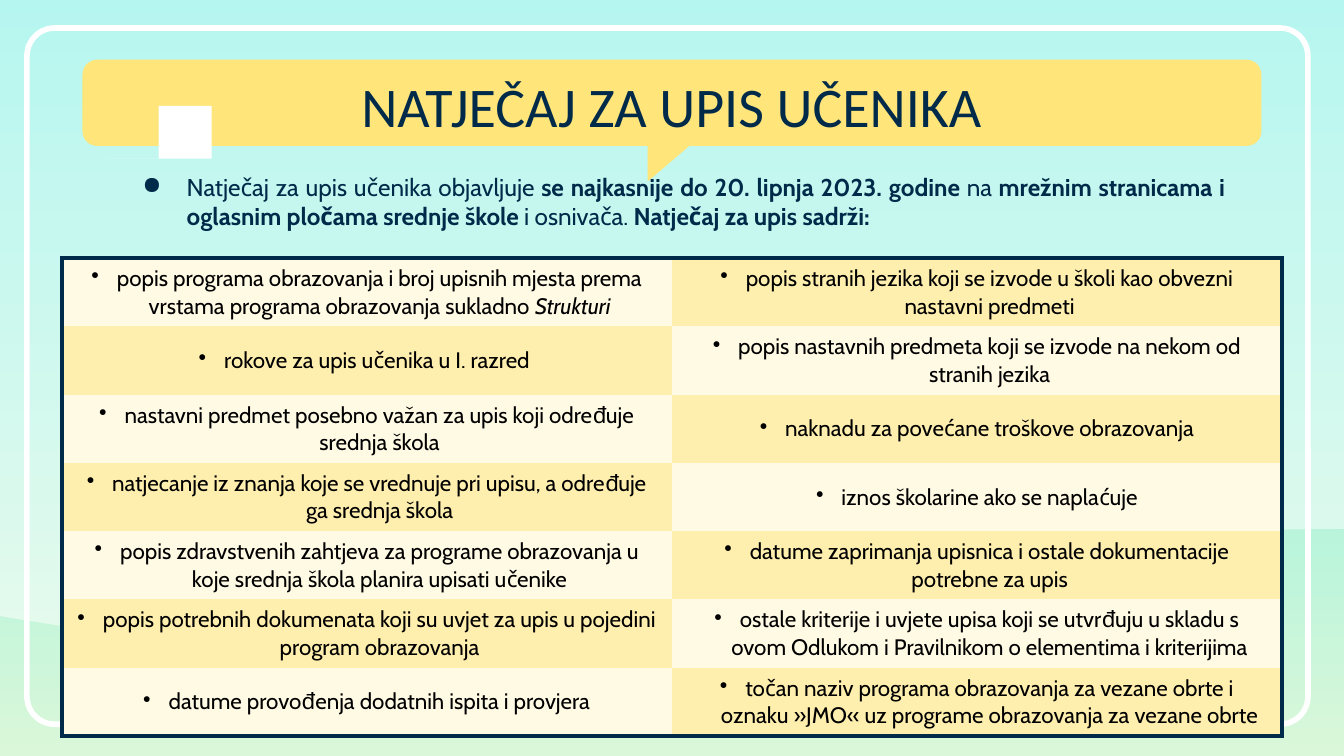
"""Build the slide about the call for pupil enrolment."""
from lxml import etree
from pptx import Presentation
from pptx.dml.color import RGBColor
from pptx.enum import shapes, text
from pptx.oxml import ns
from pptx.util import Cm, Pt

NAVY = RGBColor(0x00, 0x2A, 0x49)
BLACK = RGBColor(0x00, 0x00, 0x00)
WHITE = RGBColor(0xFF, 0xFF, 0xFF)
YELLOW = RGBColor(0xFF, 0xE5, 0x7A)
CREAM = RGBColor(0xFF, 0xFA, 0xE4)
BUTTER = RGBColor(0xFF, 0xEF, 0xAF)
AQUA = RGBColor(0x67, 0xEE, 0xE0)
MINT = RGBColor(0xDA, 0xF7, 0xD9)

TITLE = "NATJEČAJ ZA UPIS UČENIKA"
INTRO = [
    ("Natječaj za upis učenika objavljuje ", False),
    ("se najkasnije do 20. lipnja 2023. godine ", True),
    ("na ", False),
    ("mrežnim stranicama i oglasnim pločama srednje škole", True),
    (" i osnivača. ", False),
    ("Natječaj za upis sadrži:", True),
]
CONTENTS = [
    ("popis programa obrazovanja i broj upisnih mjesta prema vrstama programa obrazovanja sukladno ",
     "popis stranih jezika koji se izvode u školi kao obvezni nastavni predmeti"),
    ("rokove za upis učenika u I. razred ",
     "popis nastavnih predmeta koji se izvode na nekom od stranih jezika"),
    ("nastavni predmet posebno važan za upis koji određuje srednja škola",
     "naknadu za povećane troškove obrazovanja"),
    ("natjecanje iz znanja koje se vrednuje pri upisu, a određuje ga srednja škola",
     "iznos školarine ako se naplaćuje"),
    ("popis zdravstvenih zahtjeva za programe obrazovanja u koje srednja škola planira upisati učenike",
     "datume zaprimanja upisnica i ostale dokumentacije potrebne za upis"),
    ("popis potrebnih dokumenata koji su uvjet za upis u pojedini program obrazovanja",
     "ostale kriterije i uvjete upisa koji se utvrđuju u skladu s ovom Odlukom i Pravilnikom "
     "o elementima i kriterijima"),
    ("datume provođenja dodatnih ispita i provjera",
     "točan naziv programa obrazovanja za vezane obrte i oznaku »JMO« uz programe obrazovanja "
     "za vezane obrte"),
]
CLOUD_START = (3.23, 2.34)
CLOUD_CURVES = [
    ((3.18, 2.34), (3.15, 2.36), (3.12, 2.36)),
    ((2.69, 2.46), (2.62, 2.84), (2.62, 2.84)),
    ((2.54, 2.79), (2.46, 2.77), (2.39, 2.77)),
    ((2.13, 2.77), (2.01, 3.15), (2.01, 3.15)),
    ((2.01, 3.15), (4.19, 3.12), (4.19, 3.12)),
    ((4.04, 2.9), (3.86, 2.87), (3.78, 2.87)),
    ((3.73, 2.87), (3.73, 2.87), (3.73, 2.87)),
    ((3.73, 2.87), (3.56, 2.34), (3.23, 2.34)),
]


def add_child(parent, tag, **attributes):
    """Append a DrawingML element and return it."""
    return etree.SubElement(parent, ns.qn(f"a:{tag}"), attributes)


def paint_background(slide):
    """Fill the background with a gradient from top to bottom."""
    fill = slide.background.fill
    fill.gradient()
    fill.gradient_angle = 270
    for stop, color, position in zip(fill.gradient_stops, (AQUA, MINT), (0, 1)):
        stop.color.rgb = color
        stop.position = position


def add_panel(slide, kind, box, color=None, adjust=None):
    """Add a preset shape, filled only when a colour is given."""
    panel = slide.shapes.add_shape(kind, *map(Cm, box))
    panel.shadow.inherit = False
    panel.line.fill.background()
    if color is None:
        panel.fill.background()
    else:
        panel.fill.solid()
        panel.fill.fore_color.rgb = color
    if adjust is not None:
        panel.adjustments[0] = adjust
    return panel


def add_wave(slide):
    """Add the translucent white wave."""
    wave = add_panel(slide, shapes.MSO_SHAPE.FLOWCHART_DOCUMENT, (0, 0, 25.43, 12.47), WHITE)
    color = wave.fill._xPr.find(ns.qn("a:solidFill"))[0]
    add_child(color, "alpha", val="52000")


def add_cloud(slide):
    """Add the cloud outlined by cubic curves."""
    start, points = CLOUD_START, []
    for first, second, end in CLOUD_CURVES:
        for t in (step / 12 for step in range(1, 13)):
            points.append(tuple(
                (1 - t) ** 3 * a + 3 * (1 - t) ** 2 * t * b + 3 * (1 - t) * t ** 2 * c + t ** 3 * d
                for a, b, c, d in zip(start, first, second, end)))
        start = end
    builder = slide.shapes.build_freeform(*CLOUD_START, scale=Cm(1))
    builder.add_line_segments(points)
    cloud = builder.convert_to_shape()
    cloud.shadow.inherit = False
    cloud.fill.solid()
    cloud.fill.fore_color.rgb = WHITE
    cloud.line.fill.background()


def set_bullet(paragraph, mark, color, indent, hanging):
    """Give a paragraph a coloured bullet and a hanging indent."""
    properties = paragraph._p.get_or_add_pPr()
    properties.set("marL", str(Cm(indent)))
    properties.set("indent", str(-Cm(hanging)))
    add_child(add_child(properties, "buClr"), "srgbClr", val=str(color))
    add_child(properties, "buChar", char=mark)


def add_run(paragraph, wording, size, color, face="Cabin", bold=False, italic=False):
    """Append a formatted run."""
    run = paragraph.add_run()
    run.text = wording
    font = run.font
    font.name, font.size, font.bold, font.italic = face, Pt(size), bold, italic
    font.color.rgb = color


def set_frame(frame, anchor):
    """Set margins, wrapping and anchor of a text frame."""
    frame.margin_left = frame.margin_right = frame.margin_top = frame.margin_bottom = Cm(0.25)
    frame.word_wrap = True
    frame.auto_size = text.MSO_AUTO_SIZE.NONE
    frame.vertical_anchor = anchor


def add_intro(slide):
    """Add the introductory bullet."""
    frame = slide.shapes.add_textbox(*map(Cm, (2.01, 3, 21.39, 9.78))).text_frame
    set_frame(frame, text.MSO_ANCHOR.TOP)
    paragraph = frame.paragraphs[0]
    paragraph.alignment = text.PP_ALIGN.JUSTIFY
    set_bullet(paragraph, "●", NAVY, 1.27, 0.84)
    for wording, bold in INTRO:
        add_run(paragraph, wording, 13, NAVY, bold=bold)


def place_title(slide):
    """Fill the title placeholder and bring it above the bubble."""
    title = slide.shapes.title
    title.left, title.top, title.width, title.height = map(Cm, (3.12, 1.6, 19.15, 0.76))
    set_frame(title.text_frame, text.MSO_ANCHOR.MIDDLE)
    paragraph = title.text_frame.paragraphs[0]
    paragraph.alignment = text.PP_ALIGN.CENTER
    add_run(paragraph, TITLE, 30, NAVY, face="Calibri")
    slide.shapes._spTree.append(title._element)


def set_borders(cell, outer_sides):
    """Draw the outer sides of a cell and clear the inner ones."""
    properties = cell._tc.get_or_add_tcPr()
    for side in "LRTB":
        line = add_child(properties, f"ln{side}", w=str(Pt(2.25)))
        if side in outer_sides:
            add_child(add_child(line, "solidFill"), "srgbClr", val=str(NAVY))
        else:
            add_child(line, "noFill")


def add_contents(slide):
    """Add the chequered table of what the call contains."""
    rows, columns = len(CONTENTS), len(CONTENTS[0])
    box = map(Cm, (1.17, 4.88, 11.53 * columns, 1.29 * rows))
    table = slide.shapes.add_table(rows, columns, *box).table
    table.first_row = table.horz_banding = False
    for r, entries in enumerate(CONTENTS):
        for c, wording in enumerate(entries):
            cell = table.cell(r, c)
            edges = {"L": c == 0, "R": c == columns - 1, "T": r == 0, "B": r == rows - 1}
            set_borders(cell, [side for side, outer in edges.items() if outer])
            cell.fill.solid()
            cell.fill.fore_color.rgb = BUTTER if (r + c) % 2 else CREAM
            cell.vertical_anchor = text.MSO_ANCHOR.MIDDLE
            paragraph = cell.text_frame.paragraphs[0]
            paragraph.alignment = text.PP_ALIGN.CENTER
            set_bullet(paragraph, "•", BLACK, 0.48, 0.48)
            add_run(paragraph, wording, 12, BLACK)
    add_run(table.cell(0, 0).text_frame.paragraphs[0], "Strukturi", 12, BLACK, italic=True)


def main():
    """Build and save the presentation."""
    deck = Presentation()
    deck.slide_width, deck.slide_height = Cm(25.4), Cm(14.29)
    slide = deck.slides.add_slide(deck.slide_layouts[5])
    paint_background(slide)
    add_wave(slide)
    tail = add_panel(slide, shapes.MSO_SHAPE.ISOSCELES_TRIANGLE, (12.24, 2.67, 0.89, 0.76), YELLOW, 1)
    tail.rotation = 180
    add_panel(slide, shapes.MSO_SHAPE.ROUNDED_RECTANGLE, (1.56, 1.13, 22.28, 1.63), YELLOW, 0.17)
    border = add_panel(slide, shapes.MSO_SHAPE.ROUNDED_RECTANGLE, (0.51, 0.53, 24.21, 13.16), adjust=0.04)
    border.line.color.rgb = WHITE
    border.line.width = Pt(3)
    add_cloud(slide)
    add_intro(slide)
    place_title(slide)
    add_contents(slide)
    deck.save("out.pptx")


if __name__ == "__main__":
    main()
